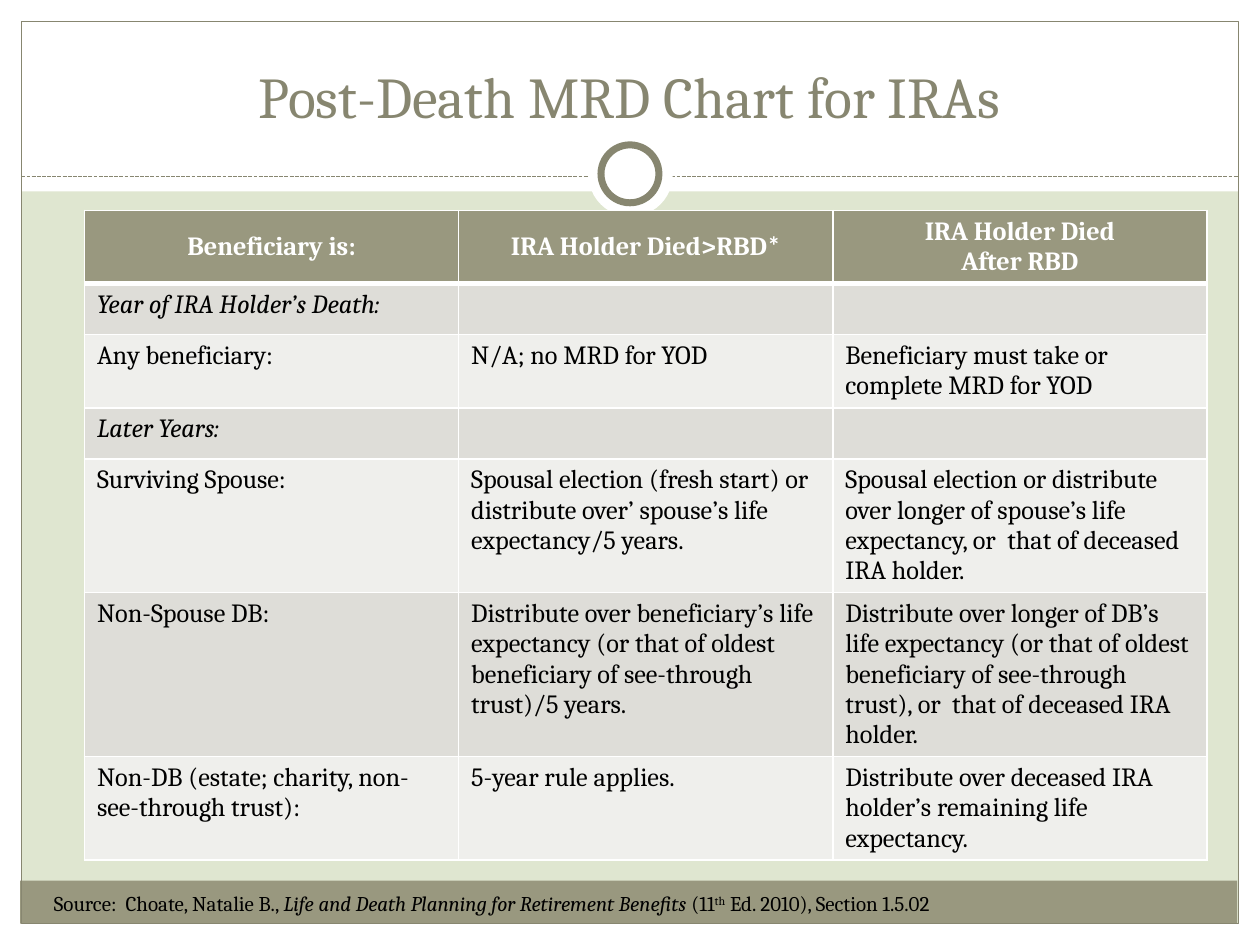
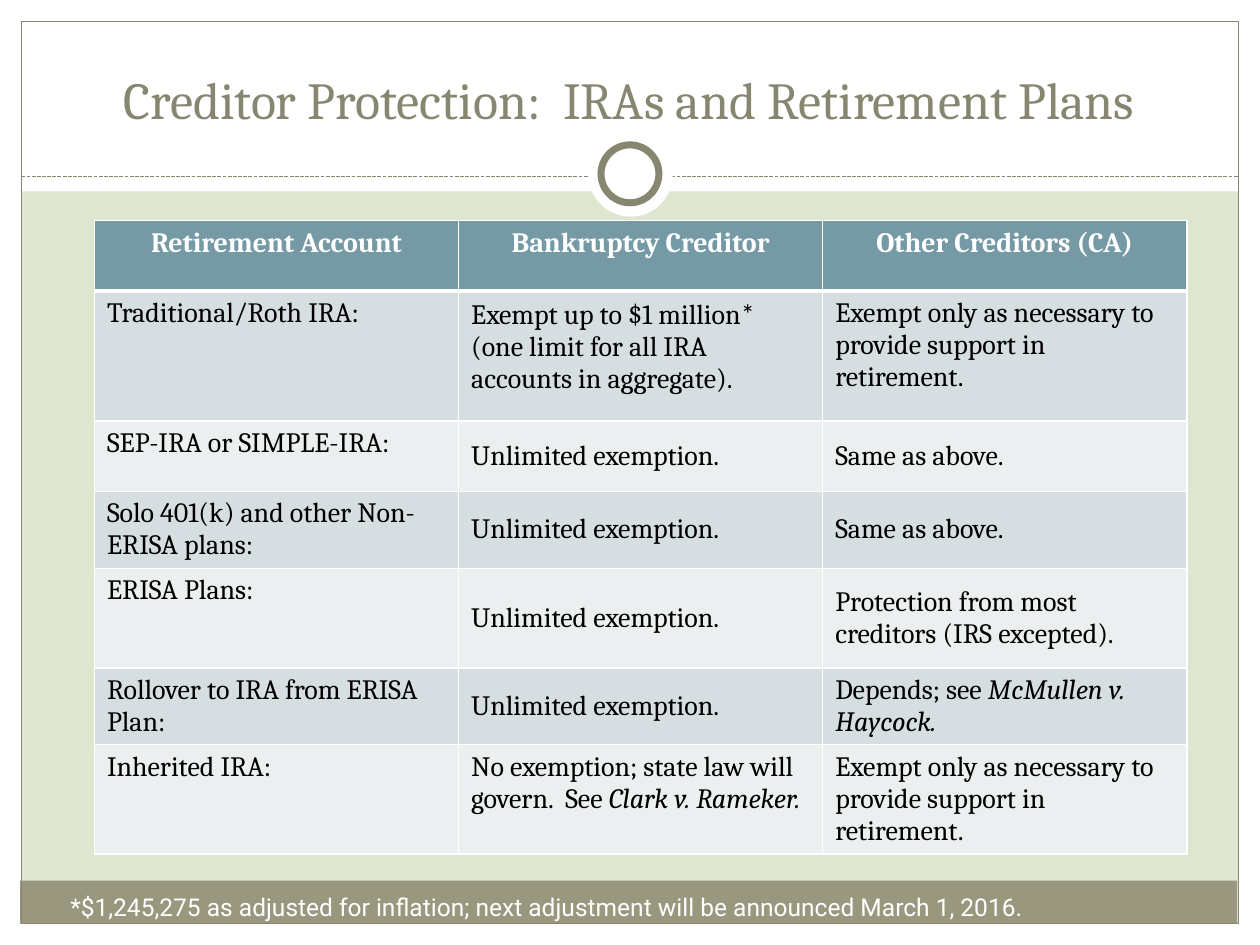
from lxml.etree import SubElement
from pptx import Presentation
from pptx.dml.color import RGBColor
from pptx.enum.dml import MSO_LINE
from pptx.enum.shapes import MSO_CONNECTOR, MSO_SHAPE
from pptx.enum.text import MSO_ANCHOR, MSO_AUTO_SIZE, PP_ALIGN
from pptx.oxml.ns import qn
from pptx.util import Inches, Pt

WHITE = RGBColor(0xFF, 0xFF, 0xFF)
BLACK = RGBColor(0x00, 0x00, 0x00)
PALE_GREEN = RGBColor(0xDF, 0xE6, 0xD0)
OLIVE = RGBColor(0x87, 0x86, 0x70)
KHAKI = RGBColor(0x99, 0x98, 0x7F)
KHAKI_BANDS = (RGBColor(0xDE, 0xDD, 0xD8), RGBColor(0xEF, 0xEF, 0xEC))
TEAL = RGBColor(0x75, 0x9A, 0xA5)
TEAL_BANDS = (RGBColor(0xD6, 0xDE, 0xE1), RGBColor(0xEC, 0xEF, 0xF0))

SERIF = "Cambria"
ITALIC = {"italic": True}
ASTERISK = ("*", {"name": "Calibri"})

DEATH_ROWS = [
    ["Beneficiary is:", [("IRA Holder Died>RBD", {}), ASTERISK], "IRA Holder Died\nAfter RBD"],
    [[("Year of IRA Holder’s Death:", ITALIC)], "", ""],
    ["Any beneficiary:", "N/A; no MRD for YOD", "Beneficiary must take or complete MRD for YOD"],
    [[("Later Years:", ITALIC)], "", ""],
    ["Surviving Spouse:",
     "Spousal election (fresh start) or distribute over’ spouse’s life expectancy/5 years.",
     "Spousal election or distribute over longer of spouse’s life expectancy, or  that of "
     "deceased IRA holder."],
    ["Non-Spouse DB:",
     "Distribute over beneficiary’s life expectancy (or that of oldest beneficiary of "
     "see-through trust)/5 years.",
     "Distribute over longer of DB’s life expectancy (or that of oldest beneficiary of "
     "see-through trust), or  that of deceased IRA holder."],
    ["Non-DB (estate; charity, non-see-through trust):", "5-year rule applies.",
     "Distribute over deceased IRA holder’s remaining life expectancy."],
]
DEATH_HEIGHTS = [0.56, 0.37, 0.56, 0.37, 1.02, 1.26, 0.79]
DEATH_SOURCE = [
    ("Source:  Choate, Natalie B., ", {}),
    ("Life and Death Planning for Retirement Benefits", ITALIC),
    (" (11", {}),
    ("th", {"baseline": 30}),
    (" Ed. 2010), Section 1.5.02", {}),
]

UNLIMITED = "Unlimited exemption."
AS_NECESSARY = "Exempt only as necessary to provide support in retirement."
CREDITOR_ROWS = [
    ["Retirement Account", "Bankruptcy Creditor", "Other Creditors (CA)"],
    ["Traditional/Roth IRA:",
     [("Exempt up to $1 million", {}), ASTERISK,
      (" (one limit for all IRA accounts in aggregate).", {})],
     AS_NECESSARY],
    ["SEP-IRA or SIMPLE-IRA:", UNLIMITED, "Same as above."],
    ["Solo 401(k) and other Non-ERISA plans:", UNLIMITED, "Same as above."],
    ["ERISA Plans:", UNLIMITED, "Protection from most creditors (IRS excepted)."],
    ["Rollover to IRA from ERISA Plan:", UNLIMITED,
     [("Depends; see ", {}), ("McMullen v. Haycock.", ITALIC)]],
    ["Inherited IRA:",
     [("No exemption; state law will govern.  See ", {}), ("Clark v. Rameker.", ITALIC)],
     AS_NECESSARY],
]
CREDITOR_HEIGHTS = [0.56, 1.03, 0.56, 0.6, 0.79, 0.6, 0.86]
CREDITOR_MIDDLE_CELLS = {(row, column) for row in range(2, 6) for column in (1, 2)}


def set_attributes(target, values):
    for name, value in values.items():
        setattr(target, name, value)


def inches(*lengths):
    return [Inches(length) for length in lengths]


def add_run(paragraph, text, values, color):
    run = paragraph.add_run()
    run.text = text
    font_values = dict(values)
    baseline = font_values.pop("baseline", None)
    set_attributes(run.font, font_values)
    run.font.color.rgb = color
    if baseline:
        run._r.get_or_add_rPr().set("baseline", str(baseline * 1000))


def write_text(text_frame, content, values, color, alignment=PP_ALIGN.LEFT):
    lines = [[(line, {})] for line in content.split("\n")] if isinstance(content, str) else [content]
    for number, runs in enumerate(lines):
        paragraph = text_frame.add_paragraph() if number else text_frame.paragraphs[0]
        paragraph.alignment = alignment
        for text, changes in runs:
            if text:
                add_run(paragraph, text, {**values, **changes}, color)


def add_plain_shape(slide, kind, box, fill=None, line=None, width=0.75):
    shape = slide.shapes.add_shape(kind, *inches(*box))
    shape.shadow.inherit = False
    if fill is None:
        shape.fill.background()
    else:
        shape.fill.solid()
        shape.fill.fore_color.rgb = fill
    if line is None:
        shape.line.fill.background()
    else:
        shape.line.color.rgb = line
        shape.line.width = Pt(width)
    return shape


def add_dashed_rule(slide, left, right, top):
    rule = slide.shapes.add_connector(MSO_CONNECTOR.STRAIGHT, *inches(left, top, right, top))
    rule.line.color.rgb = OLIVE
    set_attributes(rule.line, {"width": Pt(0.75), "dash_style": MSO_LINE.SQUARE_DOT})
    rule.line._get_or_add_ln().find(qn("a:prstDash")).set("val", "sysDash")
    SubElement(rule.element.spPr, qn("a:effectLst"))
    return rule


def build_shared_frame(layout, slide):
    layout.background.fill.solid()
    layout.background.fill.fore_color.rgb = PALE_GREEN
    for placeholder in list(layout.placeholders):
        if placeholder.placeholder_format.idx:
            placeholder.element.getparent().remove(placeholder.element)
    white_edges = [(0, 7.33, 10, 0.17), (0, 0, 10, 1.52), (0, 0, 0.17, 7.5), (9.83, 0, 0.17, 7.5)]
    parts = [add_plain_shape(slide, MSO_SHAPE.RECTANGLE, box, WHITE) for box in white_edges]
    parts += [
        add_plain_shape(slide, MSO_SHAPE.RECTANGLE, (0.16, 6.99, 9.66, 0.34), KHAKI),
        add_plain_shape(slide, MSO_SHAPE.RECTANGLE, (0.17, 0.17, 9.66, 7.16), line=OLIVE),
        add_dashed_rule(slide, 0.17, 9.83, 1.4),
        add_plain_shape(slide, MSO_SHAPE.OVAL, (4.67, 1.05, 0.67, 0.67), WHITE),
        add_plain_shape(slide, MSO_SHAPE.OVAL, (4.77, 1.15, 0.46, 0.46), WHITE, OLIVE, 4),
    ]
    layout_title = layout.placeholders[0].element
    for part in parts:
        layout_title.addprevious(part.element)


def set_title(slide, text, size):
    title = slide.shapes.title
    left, top, width, height = inches(0.33, 0.25, 9.33, 0.83)
    set_attributes(title, {"left": left, "top": top, "width": width, "height": height})
    set_attributes(title.text_frame, {
        "vertical_anchor": MSO_ANCHOR.BOTTOM,
        "word_wrap": True,
        "auto_size": MSO_AUTO_SIZE.NONE,
    })
    write_text(title.text_frame, text, {"size": Pt(size), "name": SERIF}, OLIVE, PP_ALIGN.CENTER)


def set_cell_borders(cell, bottom_width):
    properties = cell._tc.get_or_add_tcPr()
    for side, width in (("L", 1), ("R", 1), ("T", 1), ("B", bottom_width)):
        border = SubElement(properties, qn(f"a:ln{side}"), w=str(Pt(width)))
        fill = SubElement(border, qn("a:solidFill"))
        SubElement(fill, qn("a:srgbClr"), val=str(WHITE))


def add_rule_table(slide, position, column_width, heights, rows, size, header_fill, bands,
                   middle_cells):
    column_count = len(rows[0])
    box = inches(*position, column_width * column_count, sum(heights))
    table = slide.shapes.add_table(len(rows), column_count, *box).table
    for column in table.columns:
        column.width = Inches(column_width)
    for row_number, (height, contents) in enumerate(zip(heights, rows)):
        table.rows[row_number].height = Inches(height)
        is_header = row_number == 0
        for column_number, content in enumerate(contents):
            cell = table.cell(row_number, column_number)
            set_cell_borders(cell, 3 if is_header else 1)
            cell.fill.solid()
            cell.fill.fore_color.rgb = header_fill if is_header else bands[(row_number - 1) % 2]
            is_middle = (row_number, column_number) in middle_cells
            cell.vertical_anchor = MSO_ANCHOR.MIDDLE if is_middle else MSO_ANCHOR.TOP
            values = {"size": Pt(size), "name": SERIF, "bold": is_header}
            write_text(cell.text_frame, content, values, WHITE if is_header else BLACK,
                       PP_ALIGN.CENTER if is_header else PP_ALIGN.LEFT)


def add_footnote(slide, box, content, size, font_name, color):
    text_frame = slide.shapes.add_textbox(*inches(*box)).text_frame
    set_attributes(text_frame, {"word_wrap": True, "auto_size": MSO_AUTO_SIZE.SHAPE_TO_FIT_TEXT})
    write_text(text_frame, content, {"size": Pt(size), "name": font_name}, color)


def main():
    presentation = Presentation()
    set_attributes(presentation, {"slide_width": Inches(10), "slide_height": Inches(7.5)})
    layout = presentation.slide_layouts[5]

    death_slide = presentation.slides.add_slide(layout)
    build_shared_frame(layout, death_slide)
    set_title(death_slide, "Post-Death MRD Chart for IRAs", 33)
    add_rule_table(death_slide, (0.67, 1.67), 2.97, DEATH_HEIGHTS, DEATH_ROWS, 15, KHAKI,
                   KHAKI_BANDS, {(0, column) for column in range(3)})
    add_footnote(death_slide, (0.33, 7.02, 9.25, 0.3), DEATH_SOURCE, 12, SERIF, BLACK)

    creditor_slide = presentation.slides.add_slide(layout)
    set_title(creditor_slide, "Creditor Protection:  IRAs and Retirement Plans", 29.7)
    add_rule_table(creditor_slide, (0.75, 1.75), 2.89, CREDITOR_HEIGHTS, CREDITOR_ROWS, 16, TEAL,
                   TEAL_BANDS, CREDITOR_MIDDLE_CELLS)
    add_footnote(creditor_slide, (0.46, 7.03, 8.33, 0.34),
                 "*$1,245,275 as adjusted for inflation; next adjustment will be announced "
                 "March 1, 2016.", 14, "Roboto", WHITE)

    presentation.save("out.pptx")


if __name__ == "__main__":
    main()
